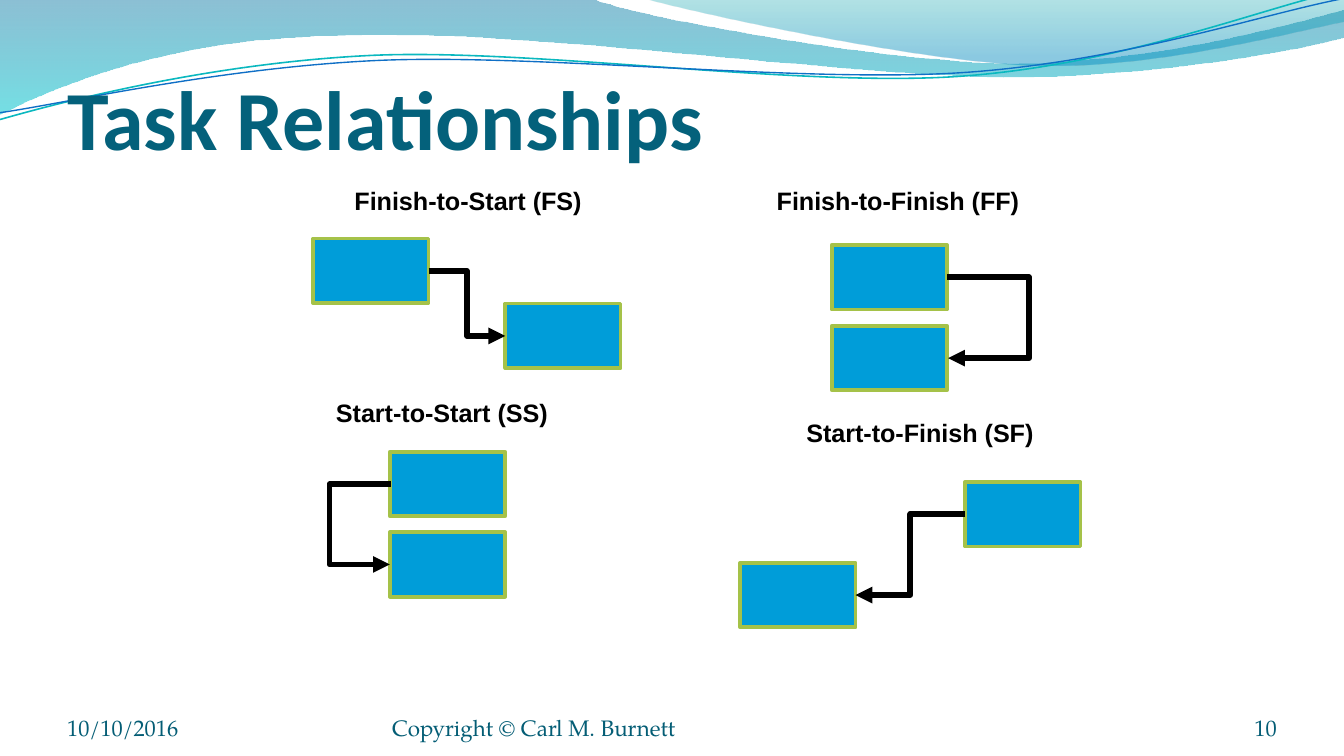
import pptx
import pptx.util
import pptx.dml.color
import pptx.enum.shapes
import pptx.enum.text
import pptx.oxml
import pptx.oxml.ns

Cm, Pt = pptx.util.Cm, pptx.util.Pt
RGB = pptx.dml.color.RGBColor.from_string
SHAPE = pptx.enum.shapes.MSO_SHAPE
ELBOW = pptx.enum.shapes.MSO_CONNECTOR.ELBOW
ALIGN = pptx.enum.text.PP_ALIGN
ANCHOR = pptx.enum.text.MSO_ANCHOR
FIT = pptx.enum.text.MSO_AUTO_SIZE
qn = pptx.oxml.ns.qn

# Content, lengths in cm
TITLE = "Task Relationships"
LEFT, RIGHT = 1, 3  # connection sites

# label, its left, top, width; two boxes; sides joined; x of the turn (None = halfway)
RELATIONS = [
    ("Finish-to-Start (FS)", (6.45, 3.38, 4.85), [(5.92, 4.51), (9.55, 5.74)], (RIGHT, LEFT), None),
    ("Start-to-Start (SS)", (6.1, 7.39, 4.57), [(7.37, 8.54), (7.37, 10.06)], (LEFT, LEFT), 6.23),
    ("Finish-to-Finish (FF)", (14.43, 3.38, 5.18), [(15.72, 4.63), (15.72, 6.16)], (RIGHT, RIGHT), 19.45),
    ("Start-to-Finish (SF)", (14.99, 7.77, 4.85), [(18.24, 9.11), (13.99, 10.64)], (LEFT, RIGHT), None),
]
FOOTER = [  # text, left, width, alignment
    ("10/10/2016", 1.27, 5.92, ALIGN.LEFT),
    ("Copyright © Carl M. Burnett", 7.41, 9.32, ALIGN.LEFT),
    ("10", 22.01, 2.12, ALIGN.RIGHT),
]

# Wave outlines: a single point ends a line, three points make a Bézier curve
BANDS = [  # segments, gradient stops (position, colour, opacity %)
    ([[(0, 0)], [(11.18, -0.03)],
      [(12.09, 0.33), (16.87, 1.19), (19.25, 1.19)],
      [(21.67, 1.19), (24.33, 0.48), (25.4, 0.18)], [(25.43, 0.69)],
      [(24.97, 0.84), (22.1, 1.45), (18.95, 1.45)],
      [(15.8, 1.42), (9.7, 0.53), (6.53, 0.66)],
      [(3.28, 0.69), (1.17, 1.57), (-0.03, 2.16)], [(0, 0)]],
     [(0, "0074A1", 45), (1, "00C6CF", 55)]),
    ([[(12.17, -0.03)],
      [(12.93, 0.2), (17.32, 1.17), (19.53, 1.24)],
      [(21.74, 1.32), (24.41, 0.61), (25.4, 0.41)], [(25.4, 0)], [(12.17, -0.03)]],
     [(0, "00A1A9", 30), (0.8, "008BBF", 45)]),
]
STRAND_TILT = -2.7
STRANDS = [  # segments before the tilt, colour, width in pt
    ([[(-0.04, 1.66)],
      [(1.19, 1.37), (4.02, 0.78), (7.05, 0.78)],
      [(10.07, 0.79), (15.01, 1.76), (18.06, 1.7)],
      [(21.14, 1.64), (23.88, 0.68), (25.4, 0.42)]], "0AB8BF", 0.85),
    ([[(-0.03, 1.53)],
      [(1.16, 1.42), (4.17, 0.87), (7.2, 0.88)],
      [(10.25, 0.9), (15.14, 1.69), (18.19, 1.63)],
      [(21.22, 1.57), (23.93, 0.78), (25.44, 0.57)]], "0F6FC6", 0.75),
]

THEME = {
    "title": dict(size=Pt(45), name="Calibri", bold=True, color="04617B"),
    "label": dict(size=Pt(13.5), name="Arial", bold=True, color="000000"),
    "footer": dict(size=Pt(12), name="TeX Gyre Pagella", bold=False, color="045D75"),
    "box": "009DD9", "edge": "A5C249", "arrow": "000000",
}
BOX_W, BOX_H = 2.18, 1.22
NUDGE = Cm(0.02)


def write(sp, text, style, align=ALIGN.LEFT, **frame):
    tf = sp.text_frame
    for key, value in frame.items():
        setattr(tf, key, value)
    p = tf.paragraphs[0]
    p.alignment = align
    r = p.add_run()
    r.text = text
    for key, value in THEME[style].items():
        if key == "color":
            r.font.color.rgb = RGB(value)
        else:
            setattr(r.font, key, value)


def outline(sp, color, width):
    sp.line.color.rgb = RGB(color)
    sp.line.width = Pt(width)


def add_wave(s, segments, close):
    points = [(Cm(x), Cm(y)) for seg in segments for x, y in seg]
    fb = s.shapes.build_freeform(*points[0])
    fb.add_line_segments(points[1:], close=close)
    sp = fb.convert_to_shape()
    sp.shadow.inherit = False
    # Gather each run of three points into one curve
    lines = iter(list(sp._element.iter(qn("a:lnTo"))))
    for seg in segments[1:]:
        steps = [next(lines) for _ in seg]
        if len(steps) == 3:
            curve = steps[0].makeelement(qn("a:cubicBezTo"), {})
            steps[0].addprevious(curve)
            for step in steps:
                curve.append(step[0])
                step.getparent().remove(step)
    return sp


def add_arrow(s, boxes, sides, turn):
    c = s.shapes.add_connector(ELBOW, 0, 0, 0, 0)
    c.begin_connect(boxes[0], sides[0])
    c.end_connect(boxes[1], sides[1])
    outline(c, THEME["arrow"], 3)
    spPr = c._element.spPr
    if turn is not None:
        # The turn is a share of the width, so the width must not be zero
        if Cm(turn) > c.begin_x:
            c.end_x += NUDGE
        else:
            c.begin_x += NUDGE
        share = round(100000 * (Cm(turn) - c.begin_x) / (c.end_x - c.begin_x))
        guides = spPr.find(qn("a:prstGeom")).get_or_add_avLst()
        guides.append(guides.makeelement(qn("a:gd"), {"name": "adj1", "fmla": f"val {share}"}))
    ln = c.line._get_or_add_ln()
    ln.append(ln.makeelement(qn("a:tailEnd"), {"type": "triangle"}))
    spPr.append(spPr.makeelement(qn("a:effectLst"), {}))


prs = pptx.Presentation()
prs.slide_width, prs.slide_height = Cm(25.4), Cm(14.29)
s = prs.slides.add_slide(prs.slide_layouts[5])

# Waves along the top
for segments, stops in BANDS:
    sp = add_wave(s, segments, True)
    sp.line.fill.background()
    sp.fill.gradient()
    sp.fill.gradient_angle = 270
    for stop, (position, color, opacity) in zip(sp.fill.gradient_stops, stops):
        stop.position = position
        stop.color.rgb = RGB(color)
        clr = stop._gs.find(qn("a:srgbClr"))
        clr.append(clr.makeelement(qn("a:alpha"), {"val": str(opacity * 1000)}))
for segments, color, width in STRANDS:
    sp = add_wave(s, segments, False)
    sp.rotation = STRAND_TILT
    sp.fill.background()
    outline(sp, color, width)

# Title, in front of the waves
title = s.shapes.title
title.left, title.top, title.width, title.height = Cm(1.27), Cm(1.13), Cm(22.86), Cm(2.03)
write(title, TITLE, "title", margin_left=0, margin_right=0, margin_bottom=0, margin_top=Cm(0.13),
      vertical_anchor=ANCHOR.BOTTOM, auto_size=FIT.NONE)
s.shapes._spTree.append(title._element)

# Footer
for text, left, width, align in FOOTER:
    sp = s.shapes.add_textbox(Cm(left), Cm(13.24), Cm(width), Cm(0.76))
    write(sp, text, "footer", align, margin_left=0, margin_right=0, margin_top=0, margin_bottom=0,
          vertical_anchor=ANCHOR.BOTTOM, word_wrap=True)

# Relationship diagrams
for label, (left, top, width), corners, sides, turn in RELATIONS:
    boxes = []
    for x, y in corners:
        sp = s.shapes.add_shape(SHAPE.RECTANGLE, Cm(x), Cm(y), Cm(BOX_W), Cm(BOX_H))
        sp.shadow.inherit = False
        sp.fill.solid()
        sp.fill.fore_color.rgb = RGB(THEME["box"])
        outline(sp, THEME["edge"], 2)
        boxes.append(sp)
    add_arrow(s, boxes, sides, turn)
    sp = s.shapes.add_textbox(Cm(left), Cm(top), Cm(width), Cm(0.84))
    write(sp, label, "label", word_wrap=False, auto_size=FIT.SHAPE_TO_FIT_TEXT)

prs.save("out.pptx")
